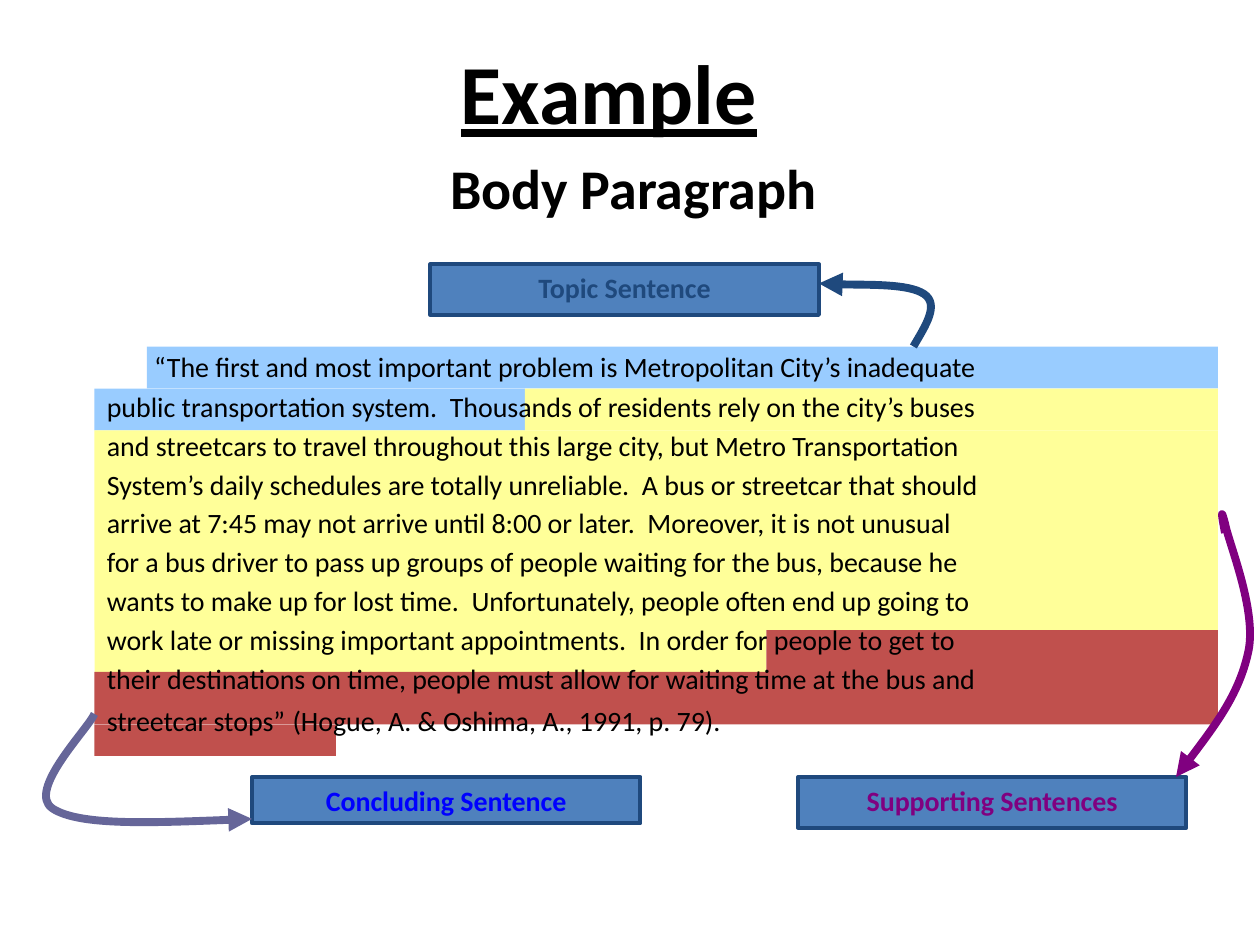
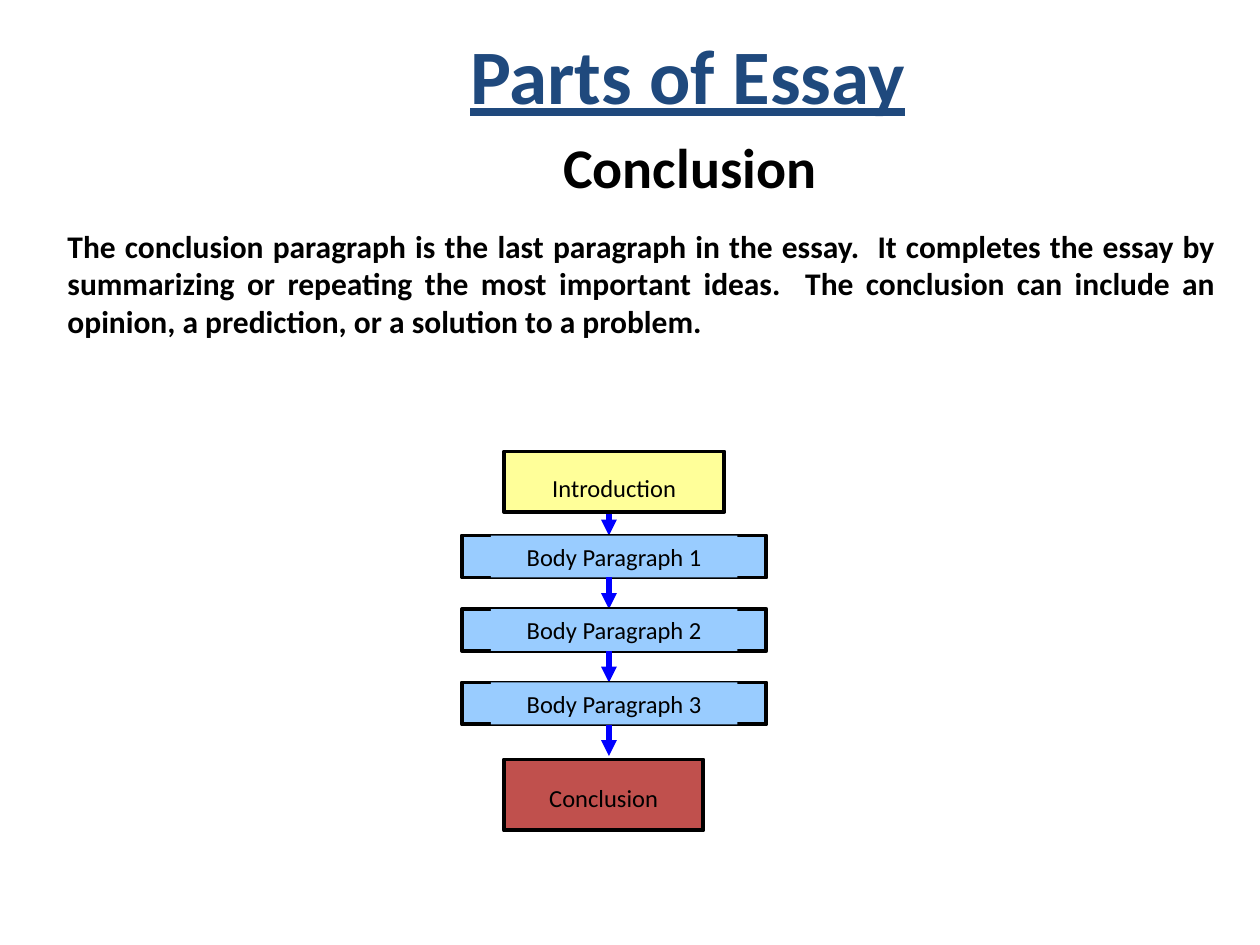
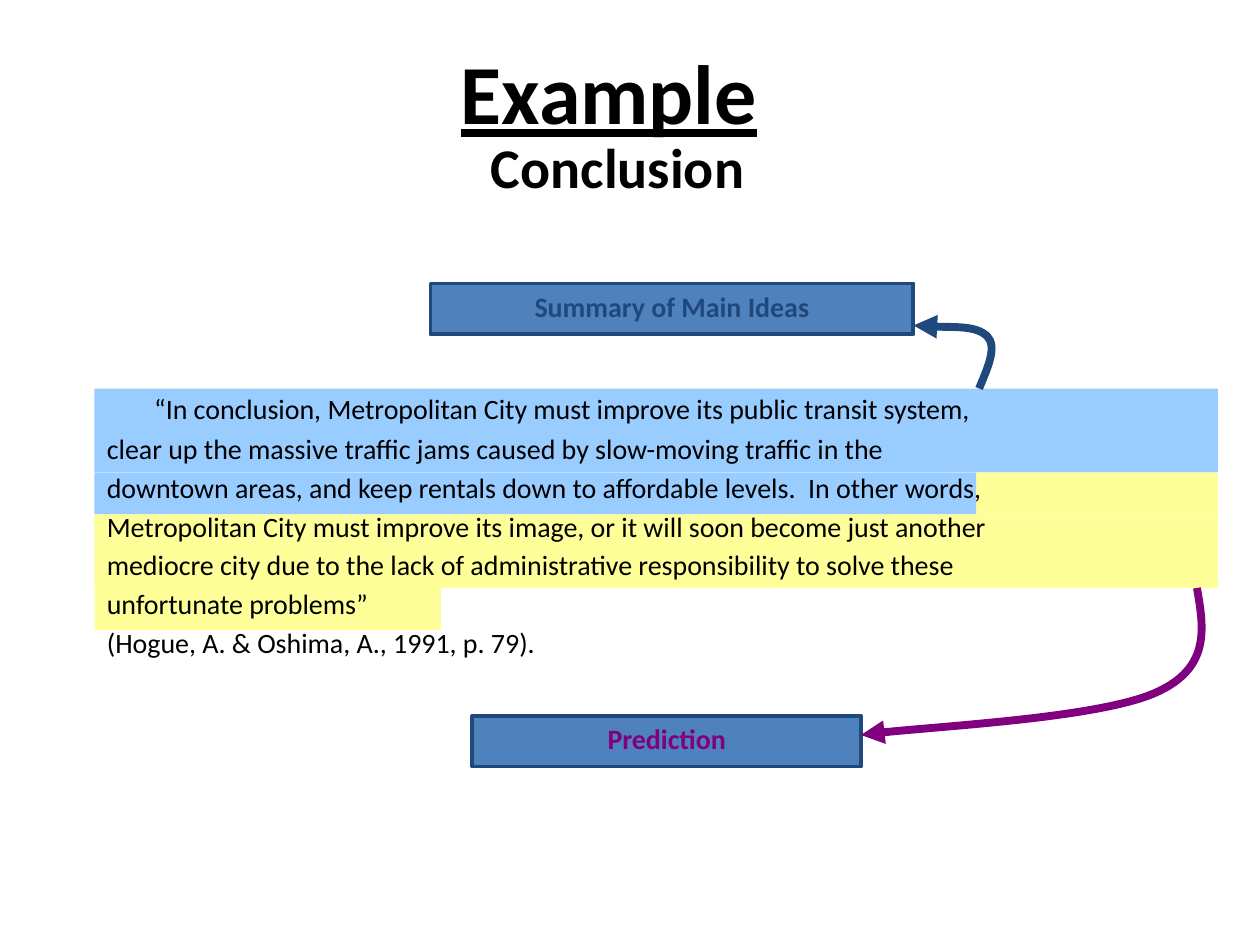
from lxml import etree
from pptx import Presentation
from pptx.dml.color import RGBColor
from pptx.enum.shapes import MSO_CONNECTOR, MSO_SHAPE
from pptx.enum.text import MSO_ANCHOR, MSO_AUTO_SIZE, PP_ALIGN
from pptx.oxml.ns import qn
from pptx.util import Pt

RECT = MSO_SHAPE.RECTANGLE
STRAIGHT = MSO_CONNECTOR.STRAIGHT
TOP, MIDDLE, BOTTOM = MSO_ANCHOR.TOP, MSO_ANCHOR.MIDDLE, MSO_ANCHOR.BOTTOM
LEFT, CENTER, JUSTIFY = PP_ALIGN.LEFT, PP_ALIGN.CENTER, PP_ALIGN.JUSTIFY
NO_FIT = MSO_AUTO_SIZE.NONE
TITLE_ONLY = 5

FONT = "Calibri"
BLACK, NAVY, BLUE, PURPLE, SLATE = "000000", "1F497D", "0000FF", "800080", "666699"
STEEL, SKY, YELLOW, RED = "4F81BD", "99CCFF", "FFFF99", "C0504D"
CITE = "(Hogue, A. & Oshima, A., 1991, p. 79)."


def rgb(code):
    return RGBColor.from_string(code)


def pts(values):
    return [Pt(v) for v in values]


class Deck:
    def __init__(self):
        self.prs = Presentation()
        self.prs.slide_width, self.prs.slide_height = Pt(720), Pt(540)
        self.slide = None

    def start(self, title, box=(42, 19.5, 612, 65), size=48, color=BLACK, anchor=MIDDLE):
        """Add a slide and format its title."""
        self.slide = self.prs.slides.add_slide(self.prs.slide_layouts[TITLE_ONLY])
        head = self.slide.shapes.title
        head.left, head.top, head.width, head.height = pts(box)
        self.frame(head, anchor)
        para = self.para(head, CENTER)
        self.run(para, title, size, color, True).underline = True

    def frame(self, shape, anchor=TOP):
        frame = shape.text_frame
        frame.word_wrap = True
        frame.auto_size = NO_FIT
        frame.vertical_anchor = anchor

    def para(self, shape, align, left=0, first=0, fresh=False):
        """Format the first paragraph, or a fresh one, with its indents."""
        frame = shape.text_frame
        para = frame.add_paragraph() if fresh else frame.paragraphs[0]
        para.alignment = align
        props = para._p.get_or_add_pPr()
        props.set("marL", str(Pt(left)))
        props.set("indent", str(Pt(first)))
        return para

    def run(self, para, text, size, color=BLACK, bold=False):
        run = para.add_run()
        run.text = text
        font = run.font
        font.name, font.size, font.bold = FONT, Pt(size), bold
        font.color.rgb = rgb(color)
        return font

    def text(self, box, text, size, align=CENTER, left=0):
        """Add a bold text box of one paragraph."""
        shape = self.slide.shapes.add_textbox(*pts(box))
        self.frame(shape)
        self.run(self.para(shape, align, left), text, size, bold=True)

    def rect(self, box, fill, line=None):
        shape = self.slide.shapes.add_shape(RECT, *pts(box))
        shape.shadow.inherit = False
        shape.fill.solid()
        shape.fill.fore_color.rgb = rgb(fill)
        if line:
            shape.line.color.rgb = rgb(line)
            shape.line.width = Pt(2.25)
        else:
            shape.line.fill.background()
        return shape

    def label(self, box, text, fill, color=BLACK, size=14, bold=False, line=None):
        """Add a rectangle with centred text at its top."""
        shape = self.rect(box, fill, line)
        self.frame(shape)
        self.run(self.para(shape, CENTER), text, size, color, bold)

    def tag(self, box, text, color):
        """Name a part of the quoted paragraph."""
        self.label(box, text, STEEL, color, 16, True, NAVY)

    def bands(self, fill, *boxes):
        for box in boxes:
            self.rect(box, fill)

    def quote(self, box, lines, tail):
        """Set fixed lines, the first one tabbed in; tail holds the last line's runs."""
        shape = self.slide.shapes.add_textbox(*pts(box))
        self.frame(shape)
        rows = [[(line, 16)] for line in lines] + [tail]
        rows[0].insert(0, ("\t", 20))
        for i, row in enumerate(rows):
            para = self.para(shape, LEFT, 27, -27, i > 0)
            if i:
                para.space_before = Pt(3)
            for text, size in row:
                self.run(para, text, size)

    def stroke(self, shape, color, width):
        """Colour a line and end it with an arrowhead."""
        shape.line.color.rgb = rgb(color)
        shape.line.width = Pt(width)
        etree.SubElement(shape.line._ln, qn("a:tailEnd"), type="triangle")

    def arrow(self, x, top, end):
        shape = self.slide.shapes.add_connector(STRAIGHT, *pts((x, top, x, end)))
        self.stroke(shape, BLUE, 3)
        etree.SubElement(shape._element.spPr, qn("a:effectLst"))

    def curve(self, color, *points):
        """Draw a Bezier arrow: a start, then two handles and an end per part."""
        start, *rest = [pts(p) for p in points]
        form = self.slide.shapes.build_freeform(*start)
        form.add_line_segments(rest, close=False)
        shape = form.convert_to_shape()
        shape.shadow.inherit = False
        shape.fill.background()
        self.stroke(shape, color, 4.5)
        steps = list(shape._element.iter(qn("a:lnTo")))
        for i in range(0, len(steps), 3):
            bend = etree.SubElement(steps[i].getparent(), qn("a:cubicBezTo"))
            for step in steps[i:i + 3]:
                bend.append(step[0])
                step.getparent().remove(step)


def body(deck):
    deck.start("Example")
    deck.text((102, 84, 498, 45), "Body Paragraph", 32, left=22)
    deck.tag((246, 151, 222, 29), "Topic Sentence", NAVY)
    deck.tag((456, 444, 222, 29), "Supporting Sentences", PURPLE)
    deck.tag((144, 444, 222, 26.5), "Concluding Sentence", BLUE)
    deck.bands(SKY, (84, 198, 612, 24), (54, 222, 246, 24))
    deck.bands(YELLOW, (300, 222, 396, 24), (54, 246, 642, 114), (54, 360, 384, 24))
    deck.bands(RED, (438, 360, 258, 24), (54, 384, 642, 30), (54, 414, 138, 18))
    deck.quote((54, 192, 648, 252), [
        "“The first and most important problem is Metropolitan City’s inadequate",
        "public transportation system.  Thousands of residents rely on the city’s buses",
        "and streetcars to travel throughout this large city, but Metro Transportation",
        "System’s daily schedules are totally unreliable.  A bus or streetcar that should",
        "arrive at 7:45 may not arrive until 8:00 or later.  Moreover, it is not unusual",
        "for a bus driver to pass up groups of people waiting for the bus, because he",
        "wants to make up for lost time.  Unfortunately, people often end up going to",
        "work late or missing important appointments.  In order for people to get to",
        "their destinations on time, people must allow for waiting time at the bus and",
    ], [("streetcar stops”", 16), (" ", 18), (CITE, 16)])
    deck.curve(PURPLE, (700, 304.5), (698.5, 296.5), (697, 288), (700, 299),
               (702, 310), (718, 348), (713.5, 371.5),
               (708.5, 396), (690.5, 420), (672, 444))
    deck.curve(NAVY, (522, 198), (529, 186), (537, 174), (528, 168),
               (519, 162), (478, 163), (468, 162))
    deck.curve(SLATE, (54, 408), (50, 417), (15, 452), (30, 462),
               (45, 472), (94, 470), (144, 468))


def parts(deck):
    deck.start("Parts of Essay", (144, 12, 498, 60), 44, NAVY, BOTTOM)
    deck.text((168, 72, 402, 45), "Conclusion", 32, left=50.5)
    deck.text((18, 126, 684, 102),
              "The conclusion paragraph is the last paragraph in the essay.  It completes "
              "the essay by summarizing or repeating the most important ideas.  The "
              "conclusion can include an opinion, a prediction, or a solution to a problem.",
              18, JUSTIFY, 13.5)
    deck.rect((288, 258, 126, 34.5), YELLOW, BLACK)
    deck.label((300, 267, 102, 24), "Introduction", YELLOW)
    deck.rect((288, 434, 114, 40.5), RED, BLACK)
    deck.label((299, 444, 92, 24), "Conclusion", RED)
    deck.arrow(348, 294, 306)
    for i in range(3):
        top = 306 + 42 * i
        deck.rect((264, top, 174, 24), SKY, BLACK)
        deck.label((280.5, top, 141, 24), f"Body Paragraph {i + 1}", SKY)
        deck.arrow(348, top + 24, top + 42)


def ending(deck):
    deck.start("Example")
    deck.text((12, 72, 660, 45), "Conclusion", 32, left=22)
    deck.tag((246, 162, 276, 29), "Summary of Main Ideas", NAVY)
    deck.tag((270, 409, 222, 29), "Prediction", PURPLE)
    deck.bands(SKY, (54, 222, 642, 48), (54, 270, 504, 24))
    deck.bands(YELLOW, (558, 270, 138, 24), (54, 294, 642, 42), (54, 336, 198, 24))
    deck.quote((54, 216, 648, 174), [
        "“In conclusion, Metropolitan City must improve its public transit system,",
        "clear up the massive traffic jams caused by slow-moving traffic in the",
        "downtown areas, and keep rentals down to affordable levels.  In other words,",
        "Metropolitan City must improve its image, or it will soon become just another",
        "mediocre city due to the lack of administrative responsibility to solve these",
        "unfortunate problems”",
    ], [(CITE, 16)])
    deck.curve(NAVY, (559.5, 222), (564.5, 210), (570, 198), (564, 192),
               (557.5, 186), (529, 187), (522, 186))
    deck.curve(PURPLE, (684, 336), (688, 359), (692, 382), (660, 396),
               (628, 410), (520, 416), (492, 420))


def main():
    deck = Deck()
    body(deck)
    parts(deck)
    ending(deck)
    deck.prs.save("out.pptx")


if __name__ == "__main__":
    main()
